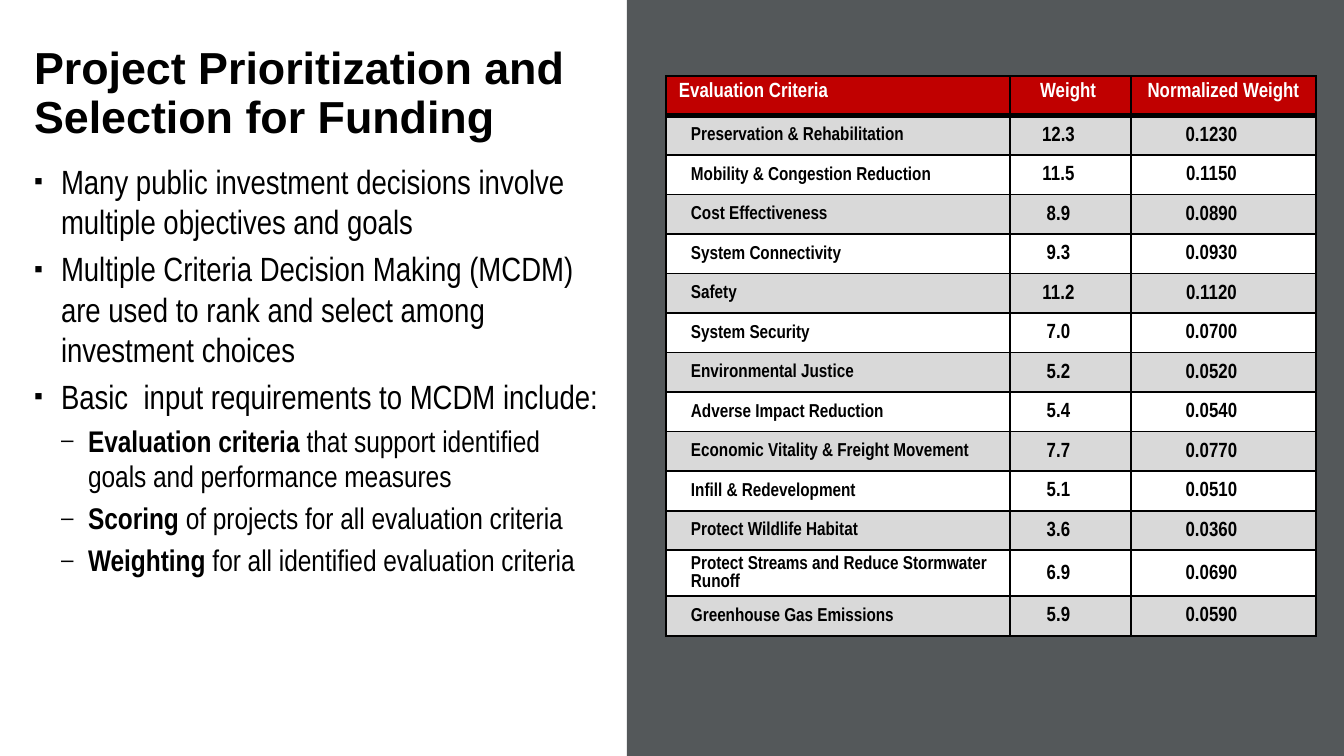
from lxml.etree import SubElement
from pptx import Presentation
from pptx.dml.color import RGBColor
from pptx.enum.shapes import MSO_SHAPE
from pptx.enum.text import MSO_ANCHOR, PP_ALIGN
from pptx.oxml import parse_xml
from pptx.oxml.ns import nsdecls, qn
from pptx.util import Pt

BLACK = RGBColor(0x00, 0x00, 0x00)
WHITE = RGBColor(0xFF, 0xFF, 0xFF)
RED = RGBColor(0xC0, 0x00, 0x00)
LIGHT_GRAY = RGBColor(0xD9, 0xD9, 0xD9)
SLATE = RGBColor(0x54, 0x58, 0x5A)
HEADING_FONT, BODY_FONT = "Arial", "Arial Narrow"

TITLE = "Project Prioritization and Selection for Funding"
# (level, bold lead, plain text)
POINTS = [
    (0, "", "Many public investment decisions involve multiple objectives and goals"),
    (0, "", "Multiple Criteria Decision Making (MCDM) are used to rank and select "
            "among investment choices"),
    (0, "", "Basic  input requirements to MCDM include:"),
    (1, "Evaluation criteria ", "that support identified goals and performance measures"),
    (1, "Scoring ", "of projects for all evaluation criteria"),
    (1, "Weighting ", "for all identified evaluation criteria"),
]
LEVELS = [("▪", 18), ("–", 16)]  # bullet, text size

HEADER = ("Evaluation Criteria", "Weight ", "Normalized Weight")
WEIGHTS = [
    ("Preservation & Rehabilitation", 12.3),
    ("Mobility & Congestion Reduction", 11.5),
    ("Cost Effectiveness", 8.9),
    ("System Connectivity", 9.3),
    ("Safety", 11.2),
    ("System Security", 7.0),
    ("Environmental Justice", 5.2),
    ("Adverse Impact Reduction", 5.4),
    ("Economic Vitality & Freight Movement", 7.7),
    ("Infill & Redevelopment", 5.1),
    ("Protect Wildlife Habitat", 3.6),
    ("Protect Streams and Reduce Stormwater Runoff", 6.9),
    ("Greenhouse Gas Emissions", 5.9),
]
TWO_LINE_ROW = 12

SLIDE_W, SLIDE_H = 1344, 756
TEXT_W, PANEL_X = 633, 627
INDENT = 27
TABLE_X, TABLE_Y, TABLE_H = 666, 76, 560
COLUMN_WIDTHS = (344, 121, 185)
TALL_ROW_H = 46


def px(length):
    return round(length * 9144000 / SLIDE_W)


def set_insets(target, left, top, right, bottom):
    target.margin_left, target.margin_top = px(left), px(top)
    target.margin_right, target.margin_bottom = px(right), px(bottom)


def add_run(paragraph, text, size, color=BLACK, bold=False, font=BODY_FONT):
    run = paragraph.add_run()
    run.text = text
    run.font.name, run.font.size, run.font.bold = font, Pt(size), bold
    run.font.color.rgb = color


def add_text_frame(slide, top, height, anchor):
    frame = slide.shapes.add_textbox(0, px(top), px(TEXT_W), px(height)).text_frame
    frame.word_wrap = True
    frame.vertical_anchor = anchor
    set_insets(frame, 34, 7, 34, 7)
    return frame


def add_bullet(paragraph, level, mark):
    properties = paragraph._p.get_or_add_pPr()
    properties.set("marL", str(px(INDENT * (level + 1))))
    properties.set("indent", str(-px(INDENT)))
    SubElement(properties, qn("a:buSzPct")).set("val", "75000")
    SubElement(properties, qn("a:buFont")).set("typeface", HEADING_FONT)
    SubElement(properties, qn("a:buChar")).set("char", mark)


def add_points(slide):
    frame = add_text_frame(slide, 154, 460, MSO_ANCHOR.TOP)
    for i, (level, lead, text) in enumerate(POINTS):
        paragraph = frame.add_paragraph() if i else frame.paragraphs[0]
        mark, size = LEVELS[level]
        paragraph.space_before = Pt(size * 0.2)
        add_bullet(paragraph, level, mark)
        if lead:
            add_run(paragraph, lead, size, bold=True)
        add_run(paragraph, text, size)


def add_title(slide):
    paragraph = add_text_frame(slide, 21, 128, MSO_ANCHOR.BOTTOM).paragraphs[0]
    paragraph.line_spacing = Pt(26)
    add_run(paragraph, TITLE, 24, bold=True, font=HEADING_FONT)


def add_panel(slide):
    panel = slide.shapes.add_shape(
        MSO_SHAPE.RECTANGLE, px(PANEL_X), 0, px(SLIDE_W - PANEL_X), px(SLIDE_H))
    panel.shadow.inherit = False
    panel.fill.solid()
    panel.fill.fore_color.rgb = SLATE
    panel.line.fill.background()


def set_borders(cell, row):
    """Draw 1 pt edges, with a 3 pt rule between header and first row."""
    widths = {"L": 1, "R": 1, "T": 3 if row == 1 else 1, "B": 3 if row == 0 else 1}
    properties = cell._tc.get_or_add_tcPr()
    for i, (side, width) in enumerate(widths.items()):
        properties.insert(i, parse_xml(
            f'<a:ln{side} {nsdecls("a")} w="{Pt(width)}"><a:solidFill>'
            f'<a:srgbClr val="{BLACK}"/></a:solidFill></a:ln{side}>'))


def fill_cell(cell, row, column, text):
    paragraph = cell.text_frame.paragraphs[0]
    paragraph.alignment = PP_ALIGN.CENTER if column else PP_ALIGN.LEFT
    cell.fill.solid()
    if row == 0:
        cell.fill.fore_color.rgb = RED
        set_insets(cell, 13, 7, 13, 7)
        add_run(paragraph, text, 11, WHITE, bold=True)
    else:
        cell.fill.fore_color.rgb = LIGHT_GRAY if row % 2 else WHITE
        cell.vertical_anchor = MSO_ANCHOR.MIDDLE
        if column:
            set_insets(cell, 1, 1, 25, 0)
        else:
            set_insets(cell, 25, 1, 1, 0)
        add_run(paragraph, text, 11 if column else 10, bold=True)
    set_borders(cell, row)


def add_weight_table(slide):
    rows = [HEADER] + [(name, f"{weight:.1f}", f"{weight / 100:.4f}")
                       for name, weight in WEIGHTS]
    table = slide.shapes.add_table(
        len(rows), len(HEADER), px(TABLE_X), px(TABLE_Y),
        px(sum(COLUMN_WIDTHS)), px(TABLE_H)).table
    table.horz_banding = False
    for column, width in zip(table.columns, COLUMN_WIDTHS):
        column.width = px(width)
    row_height = (TABLE_H - TALL_ROW_H) / (len(rows) - 1)
    for r, values in enumerate(rows):
        table.rows[r].height = px(TALL_ROW_H if r == TWO_LINE_ROW else row_height)
        for c, text in enumerate(values):
            fill_cell(table.cell(r, c), r, c, text)


def main():
    presentation = Presentation()
    presentation.slide_width, presentation.slide_height = px(SLIDE_W), px(SLIDE_H)
    slide = presentation.slides.add_slide(presentation.slide_layouts[6])
    add_points(slide)
    add_title(slide)
    add_panel(slide)
    add_weight_table(slide)
    presentation.save("out.pptx")


if __name__ == "__main__":
    main()
